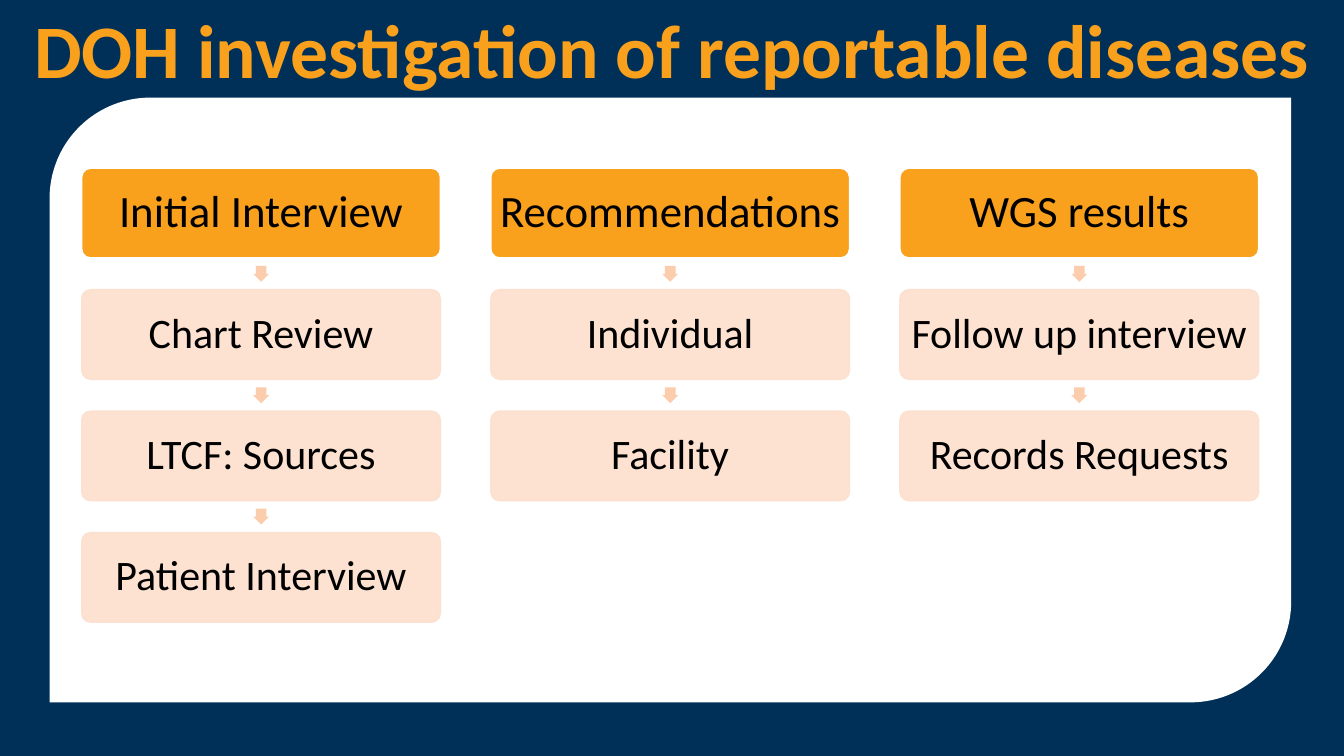
from dataclasses import dataclass

from lxml.etree import SubElement
from pptx import Presentation
from pptx.dml.color import RGBColor
from pptx.enum.shapes import MSO_SHAPE
from pptx.enum.text import MSO_ANCHOR, PP_ALIGN
from pptx.oxml.ns import qn
from pptx.shapes.autoshape import Shape
from pptx.slide import Slide
from pptx.text.text import TextFrame
from pptx.util import Cm, Pt

COLORS = {
    "navy": "003057",
    "white": "FFFFFF",
    "gold": "F9A01D",
    "peach": "FDDFCD",
    "arrow": "FBCDAC",
    "black": "000000",
}
FONT = "Calibri"

# Card grid, in centimetres
LEFT, TOP = 2.06, 4.24
WIDTH, HEIGHT = 9.04, 2.26
STEP_X, STEP_Y = 10.31, 3.06
ARROW, GAP = 0.4, 0.2


@dataclass
class Column:
    head: str
    steps: list[str]


@dataclass
class Style:
    fill: str
    line: str
    size: int
    alpha: int = 100


HEAD = Style("gold", "white", 32)
STEP = Style("peach", "peach", 30, 90)

COLUMNS = [
    Column("Initial Interview", ["Chart Review", "LTCF: Sources", "Patient Interview"]),
    Column("Recommendations", ["Individual", "Facility"]),
    Column("WGS results", ["Follow up interview", "Records Requests"]),
]


def color(name: str) -> RGBColor:
    return RGBColor.from_string(COLORS[name])


def add_block(slide: Slide, kind: MSO_SHAPE, x: float, y: float,
              w: float, h: float, fill: str) -> Shape:
    shape = slide.shapes.add_shape(kind, Cm(x), Cm(y), Cm(w), Cm(h))
    shape.shadow.inherit = False
    shape.fill.solid()
    shape.fill.fore_color.rgb = color(fill)
    shape.line.fill.background()
    return shape


def write(frame: TextFrame, text: str, size: int, tint: str, bold: bool = False) -> None:
    frame.text = text
    para = frame.paragraphs[0]
    para.alignment = PP_ALIGN.CENTER
    para.line_spacing = 0.9
    font = para.runs[0].font
    font.name, font.size, font.bold = FONT, Pt(size), bold
    font.color.rgb = color(tint)


def add_card(slide: Slide, x: float, y: float, text: str, style: Style) -> None:
    card = add_block(slide, MSO_SHAPE.ROUNDED_RECTANGLE, x, y, WIDTH, HEIGHT, style.fill)
    card.adjustments[0] = 0.1
    card.line.color.rgb = color(style.line)
    card.line.width = Pt(1)
    if style.alpha < 100:
        for tone in card._element.spPr.iter(qn("a:srgbClr")):
            SubElement(tone, qn("a:alpha")).set("val", str(style.alpha * 1000))
    frame = card.text_frame
    frame.word_wrap = True
    frame.vertical_anchor = MSO_ANCHOR.MIDDLE
    frame.margin_left = frame.margin_right = Cm(0.16)
    frame.margin_top = frame.margin_bottom = Cm(0.16)
    write(frame, text, style.size, "black")


def add_arrow(slide: Slide, x: float, y: float) -> None:
    arrow = add_block(slide, MSO_SHAPE.RIGHT_ARROW, x, y, ARROW, ARROW, "arrow")
    arrow.rotation = 90
    arrow.adjustments[0] = 0.67


def add_column(slide: Slide, x: float, column: Column) -> None:
    add_card(slide, x, TOP, column.head, HEAD)
    for row, text in enumerate(column.steps, start=1):
        y = TOP + row * STEP_Y
        add_arrow(slide, x + (WIDTH - ARROW) / 2, y - STEP_Y + HEIGHT + GAP)
        add_card(slide, x, y, text, STEP)


def main() -> None:
    deck = Presentation()
    deck.slide_width, deck.slide_height = Cm(33.87), Cm(19.05)
    slide = deck.slides.add_slide(deck.slide_layouts[6])

    # Background and panel
    slide.background.fill.solid()
    slide.background.fill.fore_color.rgb = color("navy")
    add_block(slide, MSO_SHAPE.ROUND_2_DIAG_RECTANGLE, 1.25, 2.46, 31.29, 15.24, "white")

    # Title
    title = slide.shapes.add_textbox(Cm(0), Cm(0.2), Cm(33.87), Cm(2.46))
    title.text_frame.word_wrap = False
    write(title.text_frame, "DOH investigation of reportable diseases", 54, "gold", True)

    # Columns of steps
    for index, column in enumerate(COLUMNS):
        add_column(slide, LEFT + index * STEP_X, column)

    deck.save("out.pptx")


if __name__ == "__main__":
    main()
